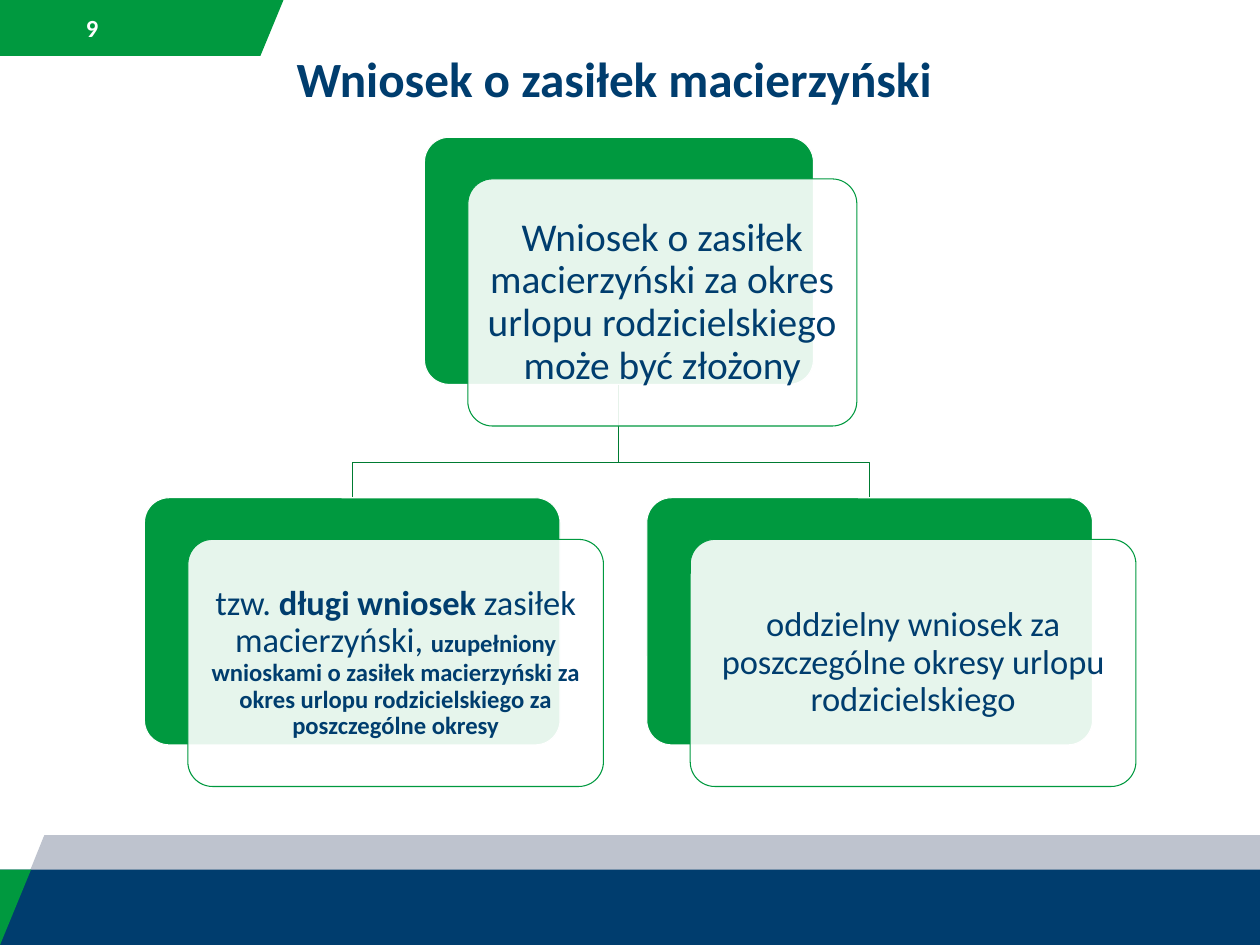
from lxml import etree
from pptx import Presentation
from pptx import util as u
from pptx.dml.color import RGBColor
from pptx.enum import shapes, text
from pptx.oxml.ns import qn

COLORS = {
    "green": "00993F",
    "dark green": "007B32",
    "navy": "003D6E",
    "grey": "BEC3CE",
    "white": "FFFFFF",
}
WIDTH, HEIGHT = 14.22, 10.67


class SlideBuilder:
    font = "Calibri"
    line_width = u.Pt(0.85)
    card_height = 2.79
    card_offset = (0.49, 0.47)

    def __init__(self, page):
        self.page = page

    def color(self, name):
        return RGBColor.from_string(COLORS[name])

    def paint(self, shape, fill=None, line=None):
        shape.shadow.inherit = False
        if fill:
            shape.fill.solid()
            shape.fill.fore_color.rgb = self.color(fill)
        else:
            shape.fill.background()
        if line:
            shape.line.color.rgb = self.color(line)
            shape.line.width = self.line_width
        else:
            shape.line.fill.background()
        return shape

    def outline(self, points, fill=None, line=None):
        """Draw a closed filled outline, or an open line when there is no fill."""
        start, *rest = [(u.Inches(x), u.Inches(y)) for x, y in points]
        builder = self.page.shapes.build_freeform(*start)
        builder.add_line_segments(rest, close=fill is not None)
        return self.paint(builder.convert_to_shape(), fill, line)

    def shape(self, kind, bounds, fill, line=None):
        shape = self.page.shapes.add_shape(kind, *map(u.Inches, bounds))
        return self.paint(shape, fill, line)

    def fill_text(self, box, spans, color, inset, anchor, align):
        """Fill a box with one paragraph of (wording, size, bold) spans."""
        frame = box.text_frame
        frame.word_wrap = True
        frame.vertical_anchor = anchor
        frame.margin_left = frame.margin_right = u.Inches(inset)
        frame.margin_top = frame.margin_bottom = u.Inches(inset)
        para = frame.paragraphs[0]
        para.alignment = align
        for wording, size, bold in spans:
            span = para.add_run()
            span.text = wording
            span.font.name = self.font
            span.font.size = u.Pt(size)
            span.font.bold = bold
            span.font.color.rgb = self.color(color)
        return para

    def label(self, bounds, spans, color, inset, anchor):
        box = self.page.shapes.add_textbox(*map(u.Inches, bounds))
        self.fill_text(box, spans, color, inset, anchor, text.PP_ALIGN.LEFT)

    def card(self, left, top, width, spans, inset):
        """Draw a green card with a translucent text card offset in front of it."""
        kind = shapes.MSO_SHAPE.ROUNDED_RECTANGLE
        dx, dy = self.card_offset
        back = self.shape(kind, (left, top, width, self.card_height), "green", "white")
        front = self.shape(kind, (left + dx, top + dy, width, self.card_height),
                           "white", "green")
        for layer in (back, front):
            layer.adjustments[0] = 0.1
        tint = front.element.spPr.find(qn("a:solidFill"))[0]
        etree.SubElement(tint, qn("a:alpha")).set("val", "90000")
        para = self.fill_text(front, spans, "navy", inset,
                              text.MSO_ANCHOR.MIDDLE, text.PP_ALIGN.CENTER)
        para.line_spacing = 0.9


def main():
    deck = Presentation()
    deck.slide_width, deck.slide_height = u.Inches(WIDTH), u.Inches(HEIGHT)
    slide = SlideBuilder(deck.slides.add_slide(deck.slide_layouts[6]))

    # Header tab and footer band
    band_top = 9.82
    slide.outline([(0, 0), (3.2, 0), (2.94, 0.63), (0, 0.63)], "green")
    slide.outline([(0, HEIGHT), (0.5, 9.43), (WIDTH, 9.43), (WIDTH, HEIGHT)], "grey")
    slide.shape(shapes.MSO_SHAPE.RECTANGLE,
                (0, band_top, WIDTH, HEIGHT - band_top), "navy")
    slide.outline([(0, band_top), (0.35, band_top), (0, HEIGHT)], "green")

    slide.label((0.91, 0.09, 0.85, 0.45), [("9", 20, True)], "white", 0.06,
                text.MSO_ANCHOR.MIDDLE)
    slide.label((3.25, 0.45, 8.9, 1.02), [("Wniosek o zasiłek macierzyński", 40, True)],
                "navy", 0.1, text.MSO_ANCHOR.TOP)

    # Tree: one request form splitting into two options
    root_left, root_top, root_width = 4.79, 1.55, 4.39
    option_top, fork_y = 5.62, 5.22
    options = [
        (1.63, 4.69, [
            ("tzw. ", 28, False),
            ("długi wniosek ", 28, True),
            ("zasiłek macierzyński, ", 28, False),
            ("uzupełniony wnioskami o zasiłek macierzyński za okres urlopu "
             "rodzicielskiego za poszczególne okresy", 20, True),
        ]),
        (7.3, 5.03, [
            ("oddzielny wniosek za poszczególne okresy urlopu rodzicielskiego", 28, False),
        ]),
    ]
    root_x = root_left + root_width / 2
    for left, width, _ in options:
        option_x = left + width / 2
        slide.outline([(root_x, root_top + slide.card_height), (root_x, fork_y),
                       (option_x, fork_y), (option_x, option_top)], line="dark green")
    slide.card(root_left, root_top, root_width, [
        ("Wniosek o zasiłek macierzyński za okres urlopu rodzicielskiego "
         "może być złożony", 32, False)], 0.13)
    for left, width, spans in options:
        slide.card(left, option_top, width, spans, 0.12)

    deck.save("out.pptx")


if __name__ == "__main__":
    main()
